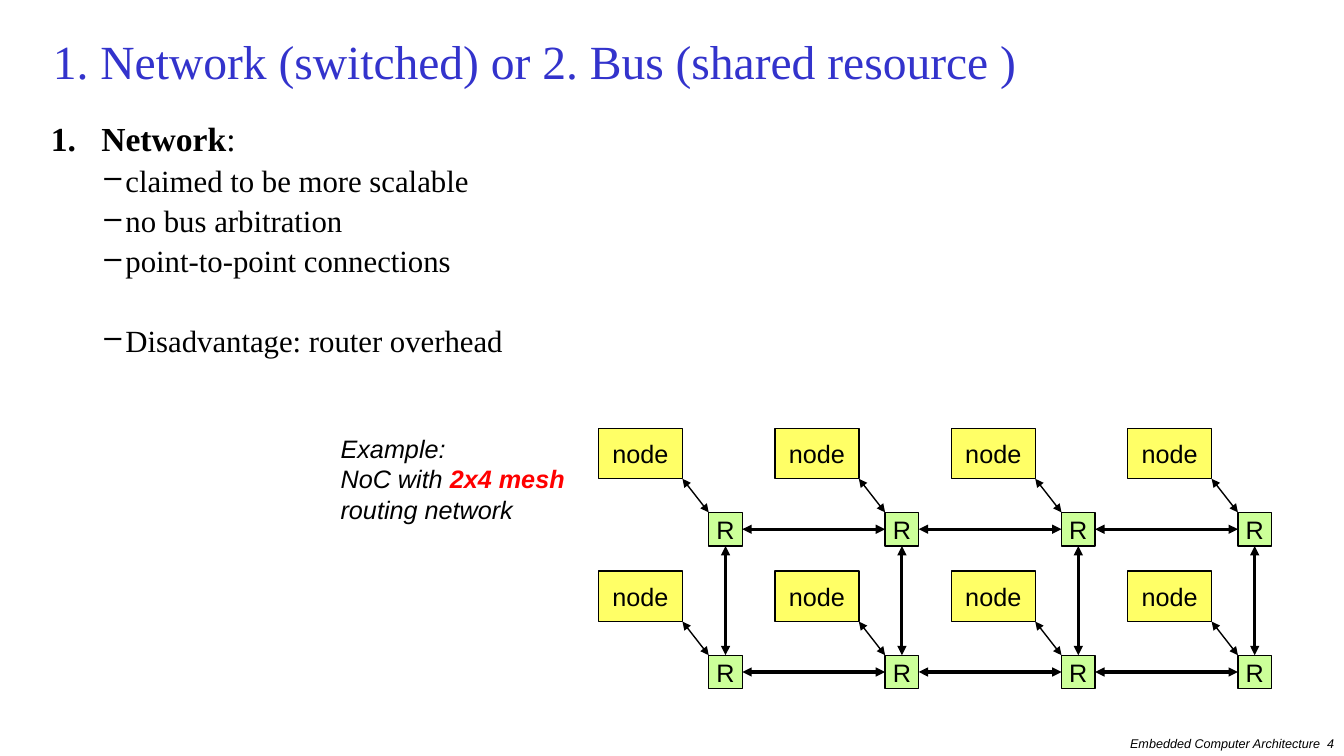
from dataclasses import dataclass
from itertools import product

from lxml.etree import SubElement
from pptx import Presentation
from pptx.dml.color import RGBColor
from pptx.enum.shapes import MSO_CONNECTOR, MSO_SHAPE
from pptx.enum.text import MSO_ANCHOR, PP_ALIGN
from pptx.oxml.ns import qn
from pptx.util import Emu, Pt

EMU_PER_PX = 9525
SANS, SERIF = "Arial", "Times New Roman"
BLACK, BLUE, RED = "000000", "3333CC", "FF0000"
YELLOW, GREEN = "FFFF66", "CCFF99"
TOP, LEFT, BOTTOM, RIGHT = range(4)


@dataclass
class Box:
    left: int
    top: int
    width: int
    height: int


@dataclass
class Style:
    font: str
    size: int
    colour: str = BLACK
    bold: bool = False
    italic: bool = False


@dataclass
class Bullet:
    tag: str
    attribute: str
    value: str
    margin: int
    indent: int


def px(length: int) -> Emu:
    return Emu(length * EMU_PER_PX)


def rgb(colour: str) -> RGBColor:
    return RGBColor.from_string(colour)


def place(box: Box) -> tuple:
    return px(box.left), px(box.top), px(box.width), px(box.height)


def add_run(paragraph, text: str, style: Style) -> None:
    run = paragraph.add_run()
    run.text = text
    run.font.name = style.font
    run.font.size = Pt(style.size)
    run.font.bold = style.bold
    run.font.italic = style.italic
    run.font.color.rgb = rgb(style.colour)


def add_text_frame(slide, box: Box, wrap: bool = True):
    frame = slide.shapes.add_textbox(*place(box)).text_frame
    frame.word_wrap = wrap
    return frame


def set_bullet(paragraph, bullet: Bullet) -> None:
    properties = paragraph._p.get_or_add_pPr()
    properties.set("marL", str(px(bullet.margin)))
    properties.set("indent", str(px(bullet.indent)))
    SubElement(properties, qn(bullet.tag)).set(bullet.attribute, bullet.value)


def add_block(slide, box: Box, label: str, fill: str):
    block = slide.shapes.add_shape(MSO_SHAPE.RECTANGLE, *place(box))
    block.shadow.inherit = False
    block.fill.solid()
    block.fill.fore_color.rgb = rgb(fill)
    block.line.color.rgb = rgb(BLACK)
    block.line.width = Pt(1)
    frame = block.text_frame
    frame.word_wrap = False
    frame.vertical_anchor = MSO_ANCHOR.MIDDLE
    frame.paragraphs[0].alignment = PP_ALIGN.CENTER
    add_run(frame.paragraphs[0], label, Style(SANS, 18))
    return block


def add_link(slide, start: tuple[int, int], end: tuple[int, int], width: float):
    link = slide.shapes.add_connector(
        MSO_CONNECTOR.STRAIGHT, *(px(value) for value in start + end))
    link.line.color.rgb = rgb(BLACK)
    link.line.width = Pt(width)
    outline = link.line._get_or_add_ln()
    for arrowhead in ("a:headEnd", "a:tailEnd"):
        SubElement(outline, qn(arrowhead)).set("type", "triangle")
    SubElement(link._element.spPr, qn("a:effectLst"))
    return link


def join_routers(slide, first, first_side: int, second, second_side: int) -> None:
    link = add_link(slide, (0, 0), (0, 0), 2.25)
    link.begin_connect(first, first_side)
    link.end_connect(second, second_side)


def add_headings(slide) -> None:
    footer = add_text_frame(slide, Box(912, 696, 368, 24)).paragraphs[0]
    footer.alignment = PP_ALIGN.RIGHT
    add_run(footer, "Embedded Computer Architecture  4", Style(SANS, 9, italic=True))

    frame = add_text_frame(slide, Box(41, 24, 1196, 77))
    frame.vertical_anchor = MSO_ANCHOR.MIDDLE
    title = frame.paragraphs[0]
    title.line_spacing = 0.8
    add_run(title, "1. Network (switched) or 2. Bus (shared resource )", Style(SERIF, 34, BLUE))


def add_arguments(slide) -> None:
    frame = add_text_frame(slide, Box(39, 112, 1202, 567))
    topic = frame.paragraphs[0]
    topic.line_spacing = 0.9
    topic.space_before = Pt(5)
    set_bullet(topic, Bullet("a:buAutoNum", "type", "arabicPeriod", 48, -48))
    add_run(topic, "Network", Style(SERIF, 24, bold=True))
    add_run(topic, ":", Style(SERIF, 24))

    dash = Bullet("a:buChar", "char", "–", 71, -20)
    for argument, space_before in (
        ("claimed to be more scalable", 5),
        ("no bus arbitration", 5),
        ("point-to-point connections", 5),
        ("Disadvantage: router overhead", 33),
    ):
        paragraph = frame.add_paragraph()
        paragraph.line_spacing = 0.9
        paragraph.space_before = Pt(space_before)
        set_bullet(paragraph, dash)
        add_run(paragraph, argument, Style(SERIF, 22))


def add_mesh(slide) -> None:
    rows, columns = 2, 4
    column_pitch, row_pitch = 168, 136
    routers = {}

    # Nodes, each with its own router
    for row, column in product(range(rows), range(columns)):
        x, y = column * column_pitch, row * row_pitch
        node = Box(570 + x, 408 + y, 80, 48)
        router = Box(675 + x, 488 + y, 32, 32)
        add_block(slide, node, "node", YELLOW)
        routers[row, column] = add_block(slide, router, "R", GREEN)
        node_corner = (node.left + node.width, node.top + node.height)
        add_link(slide, node_corner, (router.left, router.top), 1)

    # Links between neighbouring routers
    for (row, column), router in routers.items():
        if column + 1 < columns:
            join_routers(slide, router, RIGHT, routers[row, column + 1], LEFT)
        if row + 1 < rows:
            join_routers(slide, router, BOTTOM, routers[row + 1, column], TOP)


def add_caption(slide) -> None:
    frame = add_text_frame(slide, Box(315, 408, 235, 97), wrap=False)
    plain = Style(SANS, 18, italic=True)
    example = frame.paragraphs[0]
    add_run(example, "Example:", plain)
    mesh = frame.add_paragraph()
    add_run(mesh, "NoC with ", plain)
    add_run(mesh, "2x4 mesh", Style(SANS, 18, RED, bold=True, italic=True))
    add_run(frame.add_paragraph(), "routing network", plain)


def main() -> None:
    presentation = Presentation()
    presentation.slide_width, presentation.slide_height = px(1280), px(720)
    slide = presentation.slides.add_slide(presentation.slide_layouts[6])
    add_headings(slide)
    add_arguments(slide)
    add_mesh(slide)
    add_caption(slide)
    presentation.save("out.pptx")


if __name__ == "__main__":
    main()
